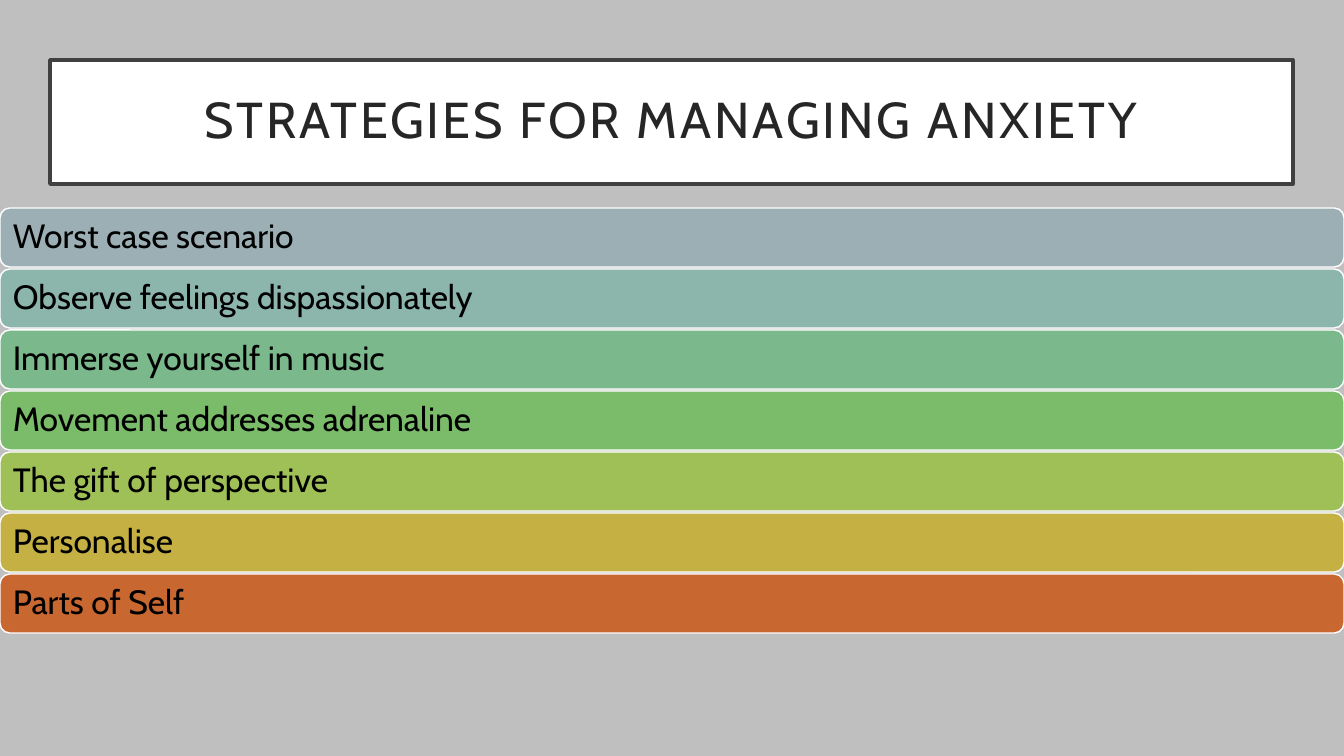
from pptx import Presentation
from pptx.dml.color import RGBColor
from pptx.enum.shapes import MSO_SHAPE
from pptx.enum.text import MSO_ANCHOR, PP_ALIGN
from pptx.util import Pt

# Content
TITLE = "STRATEGIES FOR MANAGING ANXIETY"
STRATEGIES = [
    ("Worst case scenario", "slate"),
    ("Observe feelings dispassionately", "teal"),
    ("Immerse yourself in music", "mint"),
    ("Movement addresses adrenaline", "green"),
    ("The gift of perspective", "lime"),
    ("Personalise", "mustard"),
    ("Parts of Self", "orange"),
]

# Look
COLORS = {
    "background": "BFBFBF", "white": "FFFFFF", "frame": "404040",
    "title": "262626", "black": "000000",
    "slate": "9BAFB5", "teal": "8CB6AC", "mint": "7BB88C",
    "green": "7ABC69", "lime": "9FC057", "mustard": "C5B043",
    "orange": "C96731",
}
TITLE_FONT = {"name": "Cabin", "size": Pt(36)}
BAR_FONT = {"name": "Cabin", "size": Pt(24)}

# Layout in px
PX = 914400 / 100.8
SLIDE_W, SLIDE_H = 1344, 756
TITLE_BOX = (50, 60, 1243, 124)
BAR_TOP, BAR_H, BAR_STEP = 208, 59, 61


def px(n):
    return round(n * PX)


def rgb(name):
    return RGBColor.from_string(COLORS[name])


def add_box(slide, kind, box, fill, line, line_pt, inset, text, font, color, align):
    sp = slide.shapes.add_shape(kind, *map(px, box))
    sp.shadow.inherit = False
    sp.fill.solid()
    sp.fill.fore_color.rgb = rgb(fill)
    sp.line.color.rgb = rgb(line)
    sp.line.width = Pt(line_pt)
    tf = sp.text_frame
    frame = {"word_wrap": True, "vertical_anchor": MSO_ANCHOR.MIDDLE}
    for side in ("left", "top", "right", "bottom"):
        frame[f"margin_{side}"] = px(inset)
    for key, value in frame.items():
        setattr(tf, key, value)
    p = tf.paragraphs[0]
    p.alignment = align
    p.line_spacing = 0.9
    r = p.add_run()
    r.text = text
    for key, value in font.items():
        setattr(r.font, key, value)
    r.font.color.rgb = rgb(color)
    return r


def main():
    prs = Presentation()
    prs.slide_width, prs.slide_height = px(SLIDE_W), px(SLIDE_H)
    s = prs.slides.add_slide(prs.slide_layouts[6])
    s.background.fill.solid()
    s.background.fill.fore_color.rgb = rgb("background")

    # Framed title with wide letter spacing
    r = add_box(s, MSO_SHAPE.RECTANGLE, TITLE_BOX, "white", "frame", 2.5, 20,
                TITLE, TITLE_FONT, "title", PP_ALIGN.CENTER)
    r.font._element.set("spc", "200")

    # Full-width strategy bars
    for i, (text, fill) in enumerate(STRATEGIES):
        box = (0, BAR_TOP + i * BAR_STEP, SLIDE_W, BAR_H)
        add_box(s, MSO_SHAPE.ROUNDED_RECTANGLE, box, fill, "white", 1, 10,
                text, BAR_FONT, "black", PP_ALIGN.LEFT)

    prs.save("out.pptx")


if __name__ == "__main__":
    main()
